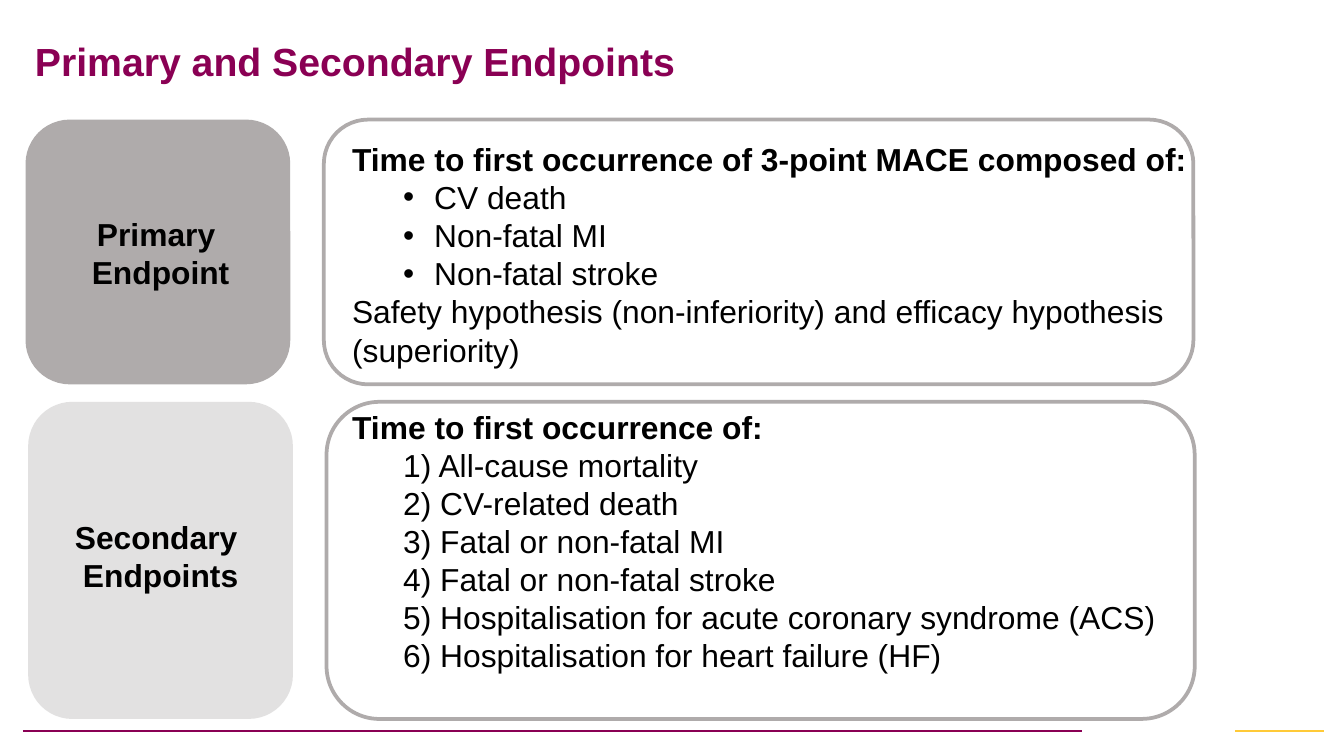
"""Build the Primary and Secondary Endpoints slide."""
from lxml import etree
from pptx import Presentation
from pptx import util as u
from pptx.dml.color import RGBColor
from pptx.enum import shapes, text
from pptx.oxml.ns import qn

In = u.Inches


def rgb(value):
    return RGBColor.from_string(value)


def add_text(s, box, paras, size=17, color="000000", align=None, anchor=text.MSO_ANCHOR.TOP):
    tf = s.shapes.add_textbox(*map(In, box)).text_frame
    tf.word_wrap = True
    tf.vertical_anchor = anchor
    tf.margin_left = tf.margin_right = In(0.07)
    tf.margin_top = tf.margin_bottom = In(0.04)
    for i, (words, bold, left, bullet) in enumerate(paras):
        p = tf.paragraphs[0] if i == 0 else tf.add_paragraph()
        p.alignment = align
        if left:
            p.level = 1
            pPr = p._p.get_or_add_pPr()
            pPr.set("marL", str(In(left)))
            pPr.set("indent", str(In(-0.23 if bullet else 0)))
            if bullet:
                etree.SubElement(pPr, qn("a:buFont")).set("typeface", "Arial")
                etree.SubElement(pPr, qn("a:buChar")).set("char", "•")
        r = p.add_run()
        r.text = words
        r.font.name = "Arial"
        r.font.size = u.Pt(size)
        r.font.bold = bold
        r.font.color.rgb = rgb(color)
    return tf


prs = Presentation()
prs.slide_width = In(10)
prs.slide_height = prs.slide_width * 9 // 16
s = prs.slides.add_slide(prs.slide_layouts[6])

for x1, x2, color in [(0.17, 8.05, "8A0054"), (9.19, 9.85, "FFCA38")]:
    rule = s.shapes.add_connector(shapes.MSO_CONNECTOR.STRAIGHT, In(x1), In(5.44), In(x2), In(5.44))
    rule.line.color.rgb = rgb(color)
    rule.line.width = u.Pt(1)
    etree.SubElement(rule._element.spPr, qn("a:effectLst"))

title = add_text(s, (0.19, 0.18, 8.62, 0.59), [("Primary and Secondary Endpoints", True, 0, False)],
                 size=21, color="8A0054", anchor=text.MSO_ANCHOR.MIDDLE)
title.paragraphs[0].line_spacing = 0.9

panels = [
    ((2.41, 0.89, 6.47, 1.97), None, None),
    ((0.19, 0.89, 1.97, 1.97), "AFABAB", None),
    ((2.43, 2.99, 6.46, 2.36), None, None),
    ((0.21, 2.99, 1.97, 2.36), "D0CECE", 60),
]
for box, fill, alpha in panels:
    sp = s.shapes.add_shape(shapes.MSO_SHAPE.ROUNDED_RECTANGLE, *map(In, box))
    sp.shadow.inherit = False
    if fill:
        sp.fill.solid()
        sp.fill.fore_color.rgb = rgb(fill)
        sp.line.fill.background()
    else:
        sp.fill.background()
        sp.line.color.rgb = rgb("AFABAB")
        sp.line.width = u.Pt(2)
    if alpha:
        clr = sp._element.spPr.find(qn("a:solidFill"))[0]
        etree.SubElement(clr, qn("a:alpha")).set("val", str(alpha * 1000))

for y, words in [(1.56, ("Primary ", "Endpoint")), (3.81, ("Secondary ", "Endpoints"))]:
    add_text(s, (-0.01, y, 2.41, 0.65), [(w, True, 0, False) for w in words],
             align=text.PP_ALIGN.CENTER)

primary = ["CV death", "Non-fatal MI", "Non-fatal stroke"]
add_text(s, (2.55, 1, 6.4, 1.79), [
    ("Time to first occurrence of 3-point MACE composed of:", True, 0, False),
    *[(w, False, 0.61, True) for w in primary],
    ("Safety hypothesis (non-inferiority) and efficacy hypothesis (superiority)", False, 0, False),
])

secondary = [
    "All-cause mortality",
    "CV-related death",
    "Fatal or non-fatal MI",
    "Fatal or non-fatal stroke",
    "Hospitalisation for acute coronary syndrome (ACS)",
    "Hospitalisation for heart failure (HF)",
]
add_text(s, (2.55, 2.99, 6.89, 2.08), [
    ("Time to first occurrence of:", True, 0, False),
    *[(f"{n}) {w}", False, 0.38, False) for n, w in enumerate(secondary, 1)],
])

prs.save("out.pptx")
